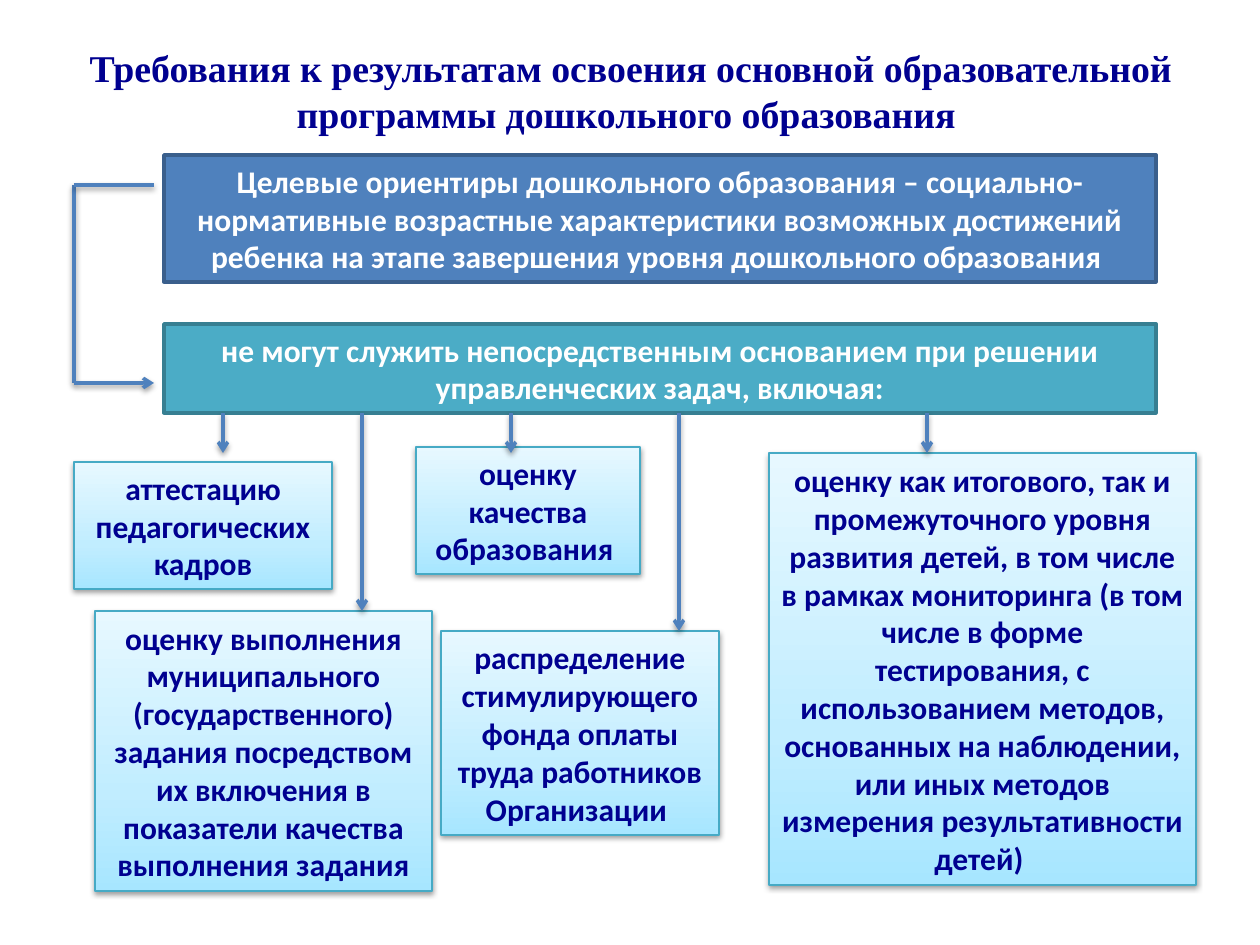
from pptx import Presentation, util as u
from pptx.dml.color import RGBColor
from pptx.enum import shapes, text
from pptx.oxml import parse_xml
from pptx.oxml.ns import nsdecls, qn

PX = 914400 / 126
NAVY = RGBColor(0x00, 0x00, 0x90)
WHITE = RGBColor(0xFF, 0xFF, 0xFF)
BLUE = RGBColor(0x4F, 0x81, 0xBD)
BLUE_EDGE = RGBColor(0x3A, 0x5F, 0x8C)
TEAL = RGBColor(0x4B, 0xAC, 0xC6)
TEAL_EDGE = RGBColor(0x37, 0x7F, 0x92)
CARD_EDGE = RGBColor(0x46, 0xAA, 0xC5)
CARD_STOPS = [(0, "A7E6FF"), (35, "C1EDFF"), (100, "E7F8FF")]
SHADOW = (
    f'<a:effectLst {nsdecls("a")}>'
    '<a:outerShdw blurRad="40000" dist="20000" dir="5400000" rotWithShape="0">'
    '<a:srgbClr val="000000"><a:alpha val="38000"/></a:srgbClr>'
    '</a:outerShdw></a:effectLst>'
)


def emu(*lengths):
    return [round(length * PX) for length in lengths]


def write(shape, words, size, font, color):
    frame = shape.text_frame
    frame.word_wrap = True
    frame.vertical_anchor = text.MSO_ANCHOR.MIDDLE
    paragraph = frame.paragraphs[0]
    paragraph.alignment = text.PP_ALIGN.CENTER
    run = paragraph.add_run()
    run.text = words
    run.font.size = u.Pt(size)
    run.font.name = font
    run.font.bold = True
    run.font.color.rgb = color


prs = Presentation()
prs.slide_width, prs.slide_height = emu(1260, 945)
slide = prs.slides.add_slide(prs.slide_layouts[6])

# Title
title = slide.shapes.add_textbox(*emu(64, 37, 1134, 107))
write(title, "Требования к результатам освоения основной образовательной "
      "программы дошкольного образования ", 21.6, "Times New Roman", NAVY)

# Wide bands
bands = [
    (155, 127, BLUE, BLUE_EDGE,
     "Целевые ориентиры дошкольного образования – социально-нормативные "
     "возрастные характеристики возможных достижений ребенка на этапе "
     "завершения уровня дошкольного образования "),
    (324, 89, TEAL, TEAL_EDGE,
     "не могут служить непосредственным основанием при решении "
     "управленческих задач, включая:"),
]
for top, height, fill, edge, words in bands:
    band = slide.shapes.add_shape(
        shapes.MSO_SHAPE.RECTANGLE, *emu(164, top, 992, height))
    band.shadow.inherit = False
    band.fill.solid()
    band.fill.fore_color.rgb = fill
    band.line.color.rgb = edge
    band.line.width = u.Pt(2)
    write(band, words, 18, "Calibri", WHITE)
    band.text_frame.auto_size = text.MSO_AUTO_SIZE.SHAPE_TO_FIT_TEXT

# Cards with the management tasks
cards = [
    (74, 462, 258, 127, "аттестацию педагогических кадров"),
    (416, 447, 224, 127, "оценку качества образования "),
    (769, 453, 427, 432,
     "оценку как итогового, так и промежуточного уровня развития детей, "
     "в том числе в рамках мониторинга (в том числе в форме тестирования, "
     "с использованием методов, основанных на наблюдении, или иных методов "
     "измерения результативности детей) "),
    (95, 611, 337, 280,
     "оценку выполнения муниципального (государственного) задания "
     "посредством их включения в показатели качества выполнения задания"),
    (441, 631, 278, 204,
     "распределение стимулирующего фонда оплаты труда работников "
     "Организации "),
]
for *place, words in cards:
    card = slide.shapes.add_shape(shapes.MSO_SHAPE.RECTANGLE, *emu(*place))
    card.fill.gradient()
    card.fill.gradient_angle = 90
    card_props = card._element.spPr
    stops = card_props.find(qn("a:gradFill")).find(qn("a:gsLst"))
    for stop in list(stops):
        stops.remove(stop)
    for position, color in CARD_STOPS:
        stops.append(parse_xml(
            f'<a:gs {nsdecls("a")} pos="{position * 1000}">'
            f'<a:srgbClr val="{color}"/></a:gs>'))
    card.line.color.rgb = CARD_EDGE
    card.line.width = u.Pt(0.75)
    card_props.append(parse_xml(SHADOW))
    write(card, words, 18, "Calibri", NAVY)
    card.text_frame.auto_size = text.MSO_AUTO_SIZE.SHAPE_TO_FIT_TEXT

# Arrows down to the cards, then the bracket on the left
drops = [(927, 453), (679, 631), (511, 453), (362, 611), (223, 453)]
lines = [(x, 413, x, end, True) for x, end in drops] + [
    (74, 185, 74, 383, False),
    (74, 185, 154, 185, False),
    (74, 383, 154, 383, True),
]
for *ends, has_arrow in lines:
    link = slide.shapes.add_connector(
        shapes.MSO_CONNECTOR.STRAIGHT, *emu(*ends))
    link.line.color.rgb = BLUE
    link.line.width = u.Pt(2)
    link_props = link._element.spPr
    if has_arrow:
        link_props.find(qn("a:ln")).append(
            parse_xml(f'<a:tailEnd {nsdecls("a")} type="arrow"/>'))
    link_props.append(parse_xml(SHADOW))

prs.save("out.pptx")
